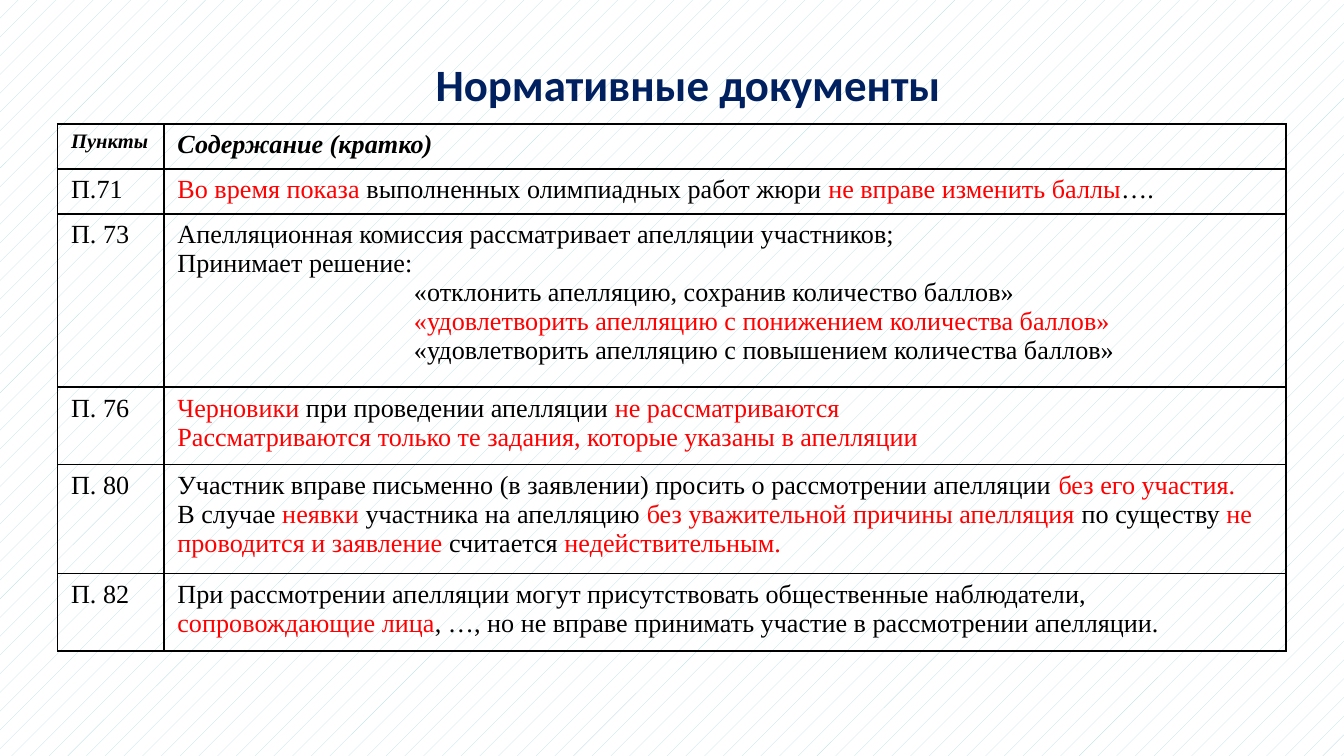
from lxml import etree
from pptx import Presentation
from pptx import util as u
from pptx.dml import color
from pptx.enum import dml, text
from pptx.oxml import ns

COLORS = {
    "black": "000000",
    "red": "FF0000",
    "navy": "002060",
    "stripe": "BBE0E3",
    "white": "FFFFFF",
}
TITLE = {"name": "Calibri", "size": u.Pt(24), "bold": True}
BODY = {"name": "Times New Roman", "size": u.Pt(14), "bold": False, "italic": False}
HEADING = {**BODY, "bold": True, "italic": True}
SMALL_HEADING = {**HEADING, "size": u.Pt(11)}

COLUMN_WIDTHS = [2.01, 21.2]
ROW_HEIGHTS = [0.85, 0.85, 3.28, 1.46, 2.06, 1.46]
OPTION_INDENT = 4.47

# In the texts below, *...* is red and a leading tab is an indented option.
ROWS = [
    ("Пункты", ["Содержание (кратко)"]),
    ("П.71", [
        "*Во время показа *выполненных олимпиадных работ жюри "
        "*не вправе изменить баллы*….",
    ]),
    ("П. 73", [
        "Апелляционная комиссия рассматривает апелляции участников;",
        "Принимает решение:",
        "\t«отклонить апелляцию, сохранив количество баллов»",
        "\t*«удовлетворить апелляцию с понижением количества баллов»*",
        "\t«удовлетворить апелляцию с повышением количества баллов»",
    ]),
    ("П. 76", [
        "*Черновики* при проведении апелляции *не рассматриваются*",
        "*Рассматриваются только те задания, которые указаны в апелляции*",
    ]),
    ("П. 80", [
        "Участник вправе письменно (в заявлении) просить о рассмотрении "
        "апелляции *без его участия.*",
        "В случае *неявки* участника на апелляцию "
        "*без уважительной причины апелляция* по существу "
        "*не проводится и заявление *считается* недействительным.*",
    ]),
    ("П. 82", [
        "При рассмотрении апелляции могут присутствовать общественные "
        "наблюдатели, *сопровождающие лица*, …, но не вправе принимать "
        "участие в рассмотрении апелляции.",
    ]),
]


def rgb(name):
    return color.RGBColor.from_string(COLORS[name])


def add_run(p, content, fmt, color_name):
    r = p.add_run()
    r.text = content
    for key, value in fmt.items():
        setattr(r.font, key, value)
    r.font.color.rgb = rgb(color_name)


def set_background(slide):
    fill = slide.background.fill
    fill.patterned()
    fill.pattern = dml.MSO_PATTERN.PERCENT_5
    fill.fore_color.rgb = rgb("stripe")
    fill.back_color.rgb = rgb("white")


def add_title(slide, content):
    sp = slide.shapes.add_textbox(u.Cm(6.3), u.Cm(0.94), u.Cm(13.41), u.Cm(1.27))
    tf = sp.text_frame
    tf.word_wrap = True
    tf.auto_size = text.MSO_AUTO_SIZE.SHAPE_TO_FIT_TEXT
    tf.vertical_anchor = text.MSO_ANCHOR.MIDDLE
    p = tf.paragraphs[0]
    p.alignment = text.PP_ALIGN.CENTER
    add_run(p, content, TITLE, "navy")


def set_borders(cell):
    tc_pr = cell._tc.get_or_add_tcPr()
    for side in ("lnL", "lnR", "lnT", "lnB"):
        ln = etree.SubElement(tc_pr, ns.qn(f"a:{side}"), w=str(u.Pt(1)))
        fill = etree.SubElement(ln, ns.qn("a:solidFill"))
        etree.SubElement(fill, ns.qn("a:srgbClr"), val=COLORS["black"])


def fill_cell(cell, lines, fmt):
    set_borders(cell)
    cell.fill.background()
    tf = cell.text_frame
    for i, line in enumerate(lines):
        p = tf.add_paragraph() if i else tf.paragraphs[0]
        if line.startswith("\t"):
            p._p.get_or_add_pPr().set("marL", str(u.Cm(OPTION_INDENT)))
        for j, part in enumerate(line.lstrip("\t").split("*")):
            if part:
                add_run(p, part, fmt, "red" if j % 2 else "black")


def add_rules_table(slide):
    frame = slide.shapes.add_table(
        len(ROWS), len(COLUMN_WIDTHS), u.Cm(1.09), u.Cm(2.34),
        u.Cm(sum(COLUMN_WIDTHS)), u.Cm(sum(ROW_HEIGHTS)))
    table = frame.table
    table.first_row = table.horz_banding = False
    for column, width in zip(table.columns, COLUMN_WIDTHS):
        column.width = u.Cm(width)
    for i, (item, lines) in enumerate(ROWS):
        table.rows[i].height = u.Cm(ROW_HEIGHTS[i])
        fill_cell(table.cell(i, 0), [item], BODY if i else SMALL_HEADING)
        fill_cell(table.cell(i, 1), lines, BODY if i else HEADING)


def main():
    prs = Presentation()
    prs.slide_width, prs.slide_height = u.Cm(25.4), u.Cm(14.29)
    slide = prs.slides.add_slide(prs.slide_layouts[6])
    set_background(slide)
    add_title(slide, "Нормативные документы")
    add_rules_table(slide)
    prs.save("out.pptx")


if __name__ == "__main__":
    main()
